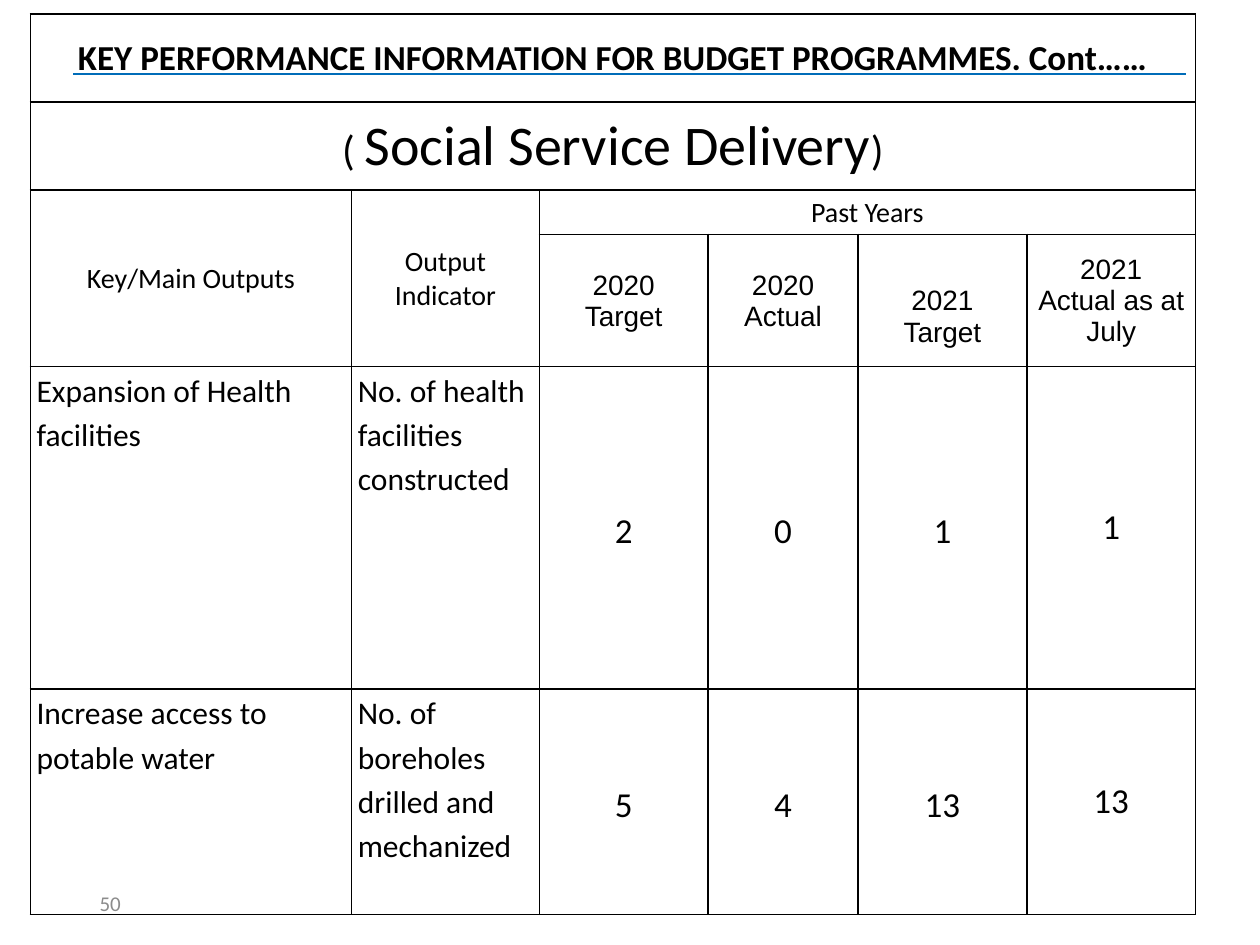
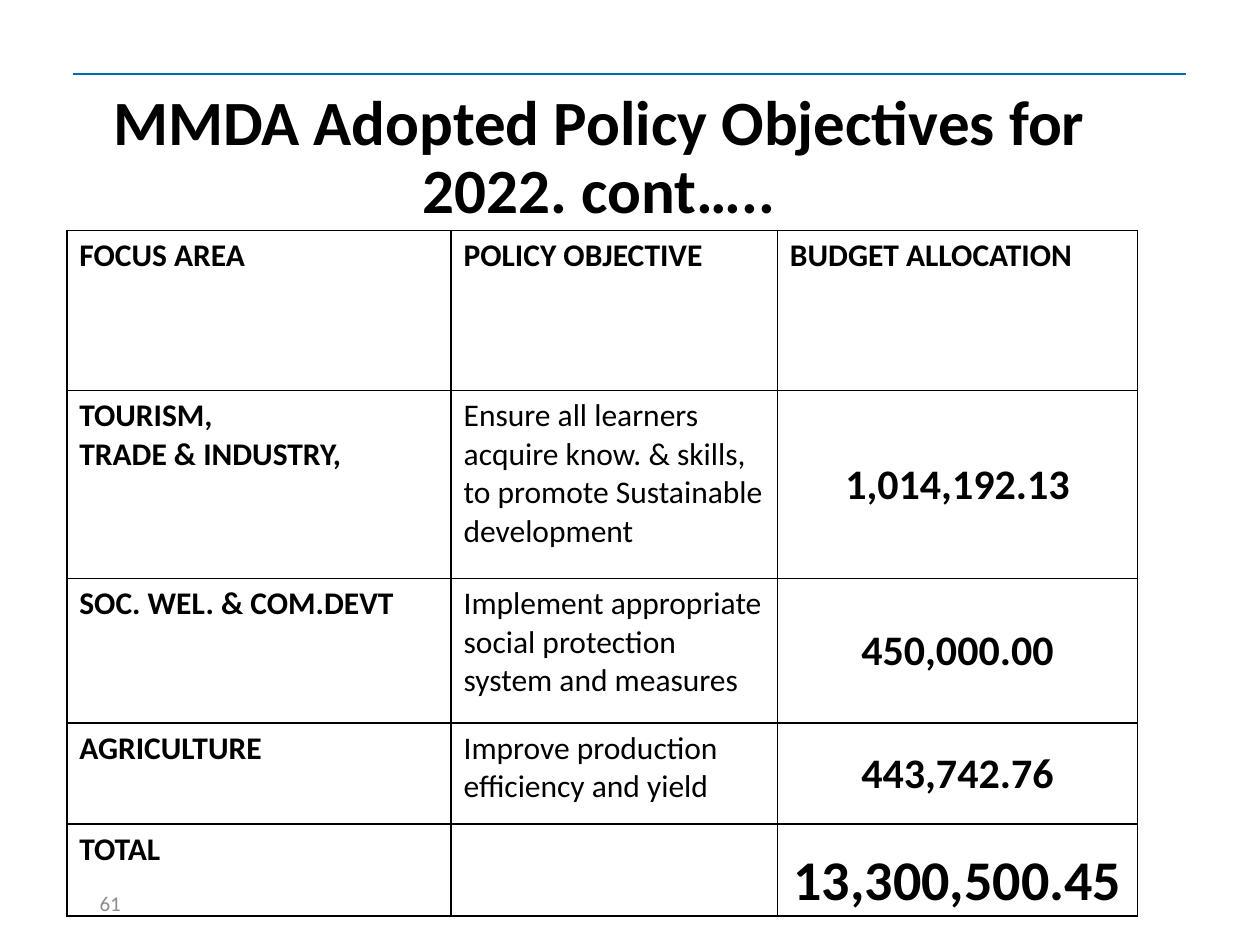
from dataclasses import dataclass, replace
from typing import NamedTuple

from lxml.etree import SubElement
from pptx import Presentation
from pptx.dml.color import RGBColor
from pptx.enum.shapes import MSO_CONNECTOR as Connector
from pptx.enum.text import MSO_ANCHOR as Anchor, PP_ALIGN as Align
from pptx.oxml.ns import qn
from pptx.util import Inches, Pt

BLACK = RGBColor(0x00, 0x00, 0x00)
RULE_BLUE = RGBColor(0x00, 0x6C, 0xB8)
NUMBER_GREY = RGBColor(0x8C, 0x8C, 0x8C)
BODY_FONT = "Calibri"
YEAR_FONT = "Arial"
BORDER_WIDTH = Pt(1)


class Run(NamedTuple):
    text: str
    size: float


@dataclass(frozen=True)
class CellStyle:
    size: float
    bold: bool = False
    font: str = BODY_FONT
    align: Align = Align.LEFT
    anchor: Anchor = Anchor.TOP
    line_spacing: float = 1.0
    margins: tuple[float, float, float, float] = (0.01, 0.01, 0.01, 0)


@dataclass(frozen=True)
class Entry:
    """A table cell: its place, its text, and how many rows and columns it spans."""
    row: int
    col: int
    text: str | tuple[Run, ...]
    style: CellStyle
    rows: int = 1
    cols: int = 1


@dataclass(frozen=True)
class TableSpec:
    left: float
    top: float
    col_widths: tuple[float, ...]
    row_heights: tuple[float, ...]
    entries: list[Entry]


BANNER = CellStyle(20, bold=True, align=Align.CENTER, anchor=Anchor.MIDDLE)
SECTOR = replace(BANNER, size=24, bold=False)
HEADING = replace(SECTOR, size=16)
YEAR = replace(HEADING, font=YEAR_FONT)
LOWERED_YEAR = replace(YEAR, margins=(0.01, 0.26, 0.01, 0))
OUTPUT = CellStyle(18, line_spacing=1.15, margins=(0.05, 0, 0.05, 0))
RESULT = replace(OUTPUT, size=20, align=Align.CENTER, anchor=Anchor.MIDDLE)
LATEST_RESULT = replace(RESULT, line_spacing=1.0)

OBJECTIVE = CellStyle(18, margins=(0.1, 0.05, 0.1, 0.05))
FOCUS_AREA = replace(OBJECTIVE, bold=True)
AMOUNT = replace(BANNER, size=24)
TOTAL_AMOUNT = replace(AMOUNT, size=32, anchor=Anchor.BOTTOM)


def write_text(frame, text: str | tuple[Run, ...], *, size: float,
               color: RGBColor = BLACK, bold: bool = False, font: str = BODY_FONT,
               align: Align = Align.LEFT, line_spacing: float = 1.0) -> None:
    """Write one paragraph per line of a string, or one paragraph of sized runs."""
    if isinstance(text, str):
        paragraphs = [(Run(line, size),) for line in text.split("\n")]
    else:
        paragraphs = [text]
    for index, runs in enumerate(paragraphs):
        paragraph = frame.add_paragraph() if index else frame.paragraphs[0]
        paragraph.alignment = align
        paragraph.line_spacing = line_spacing
        for part in runs:
            run = paragraph.add_run()
            run.text = part.text
            run.font.size = Pt(part.size)
            run.font.name = font
            run.font.bold = bold
            run.font.color.rgb = color


def add_text(slide, left: float, top: float, width: float, height: float,
             text: str, **text_format) -> None:
    frame = slide.shapes.add_textbox(
        Inches(left), Inches(top), Inches(width), Inches(height)).text_frame
    frame.word_wrap = True
    frame.margin_left = frame.margin_top = frame.margin_right = frame.margin_bottom = 0
    write_text(frame, text, **text_format)


def add_header_rule(slide) -> None:
    rule = slide.shapes.add_connector(
        Connector.STRAIGHT, Inches(0.58), Inches(0.59), Inches(9.41), Inches(0.59))
    rule.line.color.rgb = RULE_BLUE
    rule.line.width = Pt(1)
    SubElement(rule._element.spPr, qn("a:effectLst"))


def add_base_slide(deck, number: int):
    """Add a blank slide with the shared rule and page number."""
    slide = deck.slides.add_slide(deck.slide_layouts[6])
    add_header_rule(slide)
    add_text(slide, 0.79, 7.07, 0.45, 0.2, str(number), size=12, color=NUMBER_GREY)
    return slide


def outline_cell(cell) -> None:
    cell.fill.background()
    properties = cell._tc.get_or_add_tcPr()
    for index, side in enumerate(("lnL", "lnR", "lnT", "lnB")):
        border = SubElement(properties, qn(f"a:{side}"), w=str(BORDER_WIDTH))
        fill = SubElement(border, qn("a:solidFill"))
        SubElement(fill, qn("a:srgbClr"), val=str(BLACK))
        properties.remove(border)
        properties.insert(index, border)


def fill_cell(cell, entry: Entry) -> None:
    style = entry.style
    (cell.margin_left, cell.margin_top,
     cell.margin_right, cell.margin_bottom) = map(Inches, style.margins)
    cell.vertical_anchor = style.anchor
    write_text(cell.text_frame, entry.text, size=style.size, bold=style.bold,
               font=style.font, align=style.align, line_spacing=style.line_spacing)


def add_grid(slide, spec: TableSpec) -> None:
    table = slide.shapes.add_table(
        len(spec.row_heights), len(spec.col_widths),
        Inches(spec.left), Inches(spec.top),
        Inches(sum(spec.col_widths)), Inches(sum(spec.row_heights))).table
    table.first_row = table.horz_banding = False
    for column, width in zip(table.columns, spec.col_widths):
        column.width = Inches(width)
    for row, height in zip(table.rows, spec.row_heights):
        row.height = Inches(height)
    for cell in table.iter_cells():
        outline_cell(cell)
    for entry in spec.entries:
        cell = table.cell(entry.row, entry.col)
        if entry.rows > 1 or entry.cols > 1:
            cell.merge(table.cell(entry.row + entry.rows - 1,
                                  entry.col + entry.cols - 1))
        fill_cell(cell, entry)


def row_entries(row: int, texts: tuple[str, ...], styles: tuple[CellStyle, ...],
                first_col: int = 0) -> list[Entry]:
    return [Entry(row, col, text, style)
            for col, (text, style) in enumerate(zip(texts, styles), first_col)]


def add_performance_slide(deck) -> None:
    sector = (Run("( ", 24), Run("Social Service Delivery", 32), Run(")", 24))
    entries = [
        Entry(0, 0, "KEY PERFORMANCE INFORMATION FOR BUDGET PROGRAMMES. Cont……",
              BANNER, cols=6),
        Entry(1, 0, sector, SECTOR, cols=6),
        Entry(2, 0, "Key/Main Outputs", HEADING, rows=2),
        Entry(2, 1, "Output Indicator", HEADING, rows=2),
        Entry(2, 2, "Past Years", HEADING, cols=4),
    ]
    entries += row_entries(
        3, ("2020\nTarget", "2020\nActual", "2021\nTarget", "2021\nActual as at July"),
        (YEAR, YEAR, LOWERED_YEAR, YEAR), first_col=2)
    outputs = (
        ("Expansion of Health facilities", "No. of health facilities constructed",
         "2", "0", "1", "1"),
        ("Increase access to potable water", "No. of boreholes drilled and mechanized",
         "5", "4", "13", "13"),
    )
    output_styles = (OUTPUT, OUTPUT, RESULT, RESULT, RESULT, LATEST_RESULT)
    for row, texts in enumerate(outputs, 4):
        entries += row_entries(row, texts, output_styles)
    add_grid(add_base_slide(deck, 50), TableSpec(
        0.24, 0.11, (2.55, 1.49, 1.34, 1.19, 1.34, 1.34),
        (0.7, 0.7, 0.35, 1.05, 2.56, 1.79), entries))


def add_objectives_slide(deck) -> None:
    slide = add_base_slide(deck, 61)
    add_text(slide, 0.59, 0.72, 8.33, 1.03,
             "MMDA Adopted Policy Objectives for 2022. cont…..",
             size=36, bold=True, align=Align.CENTER, line_spacing=0.9)
    entries = row_entries(0, ("FOCUS AREA", "POLICY OBJECTIVE", "BUDGET ALLOCATION"),
                          (FOCUS_AREA,) * 3)
    allocations = (
        ("TOURISM,\nTRADE & INDUSTRY,",
         "Ensure all learners acquire know. & skills, to promote Sustainable development",
         "1,014,192.13"),
        ("SOC. WEL. & COM.DEVT",
         "Implement appropriate social protection system and measures", "450,000.00"),
        ("AGRICULTURE", "Improve production efficiency and yield", "443,742.76"),
    )
    for row, texts in enumerate(allocations, 1):
        entries += row_entries(row, texts, (FOCUS_AREA, OBJECTIVE, AMOUNT))
    entries += [Entry(4, 0, "TOTAL", FOCUS_AREA),
                Entry(4, 2, "13,300,500.45", TOTAL_AMOUNT)]
    add_grid(slide, TableSpec(0.53, 1.83, (3.05, 2.59, 2.86),
                              (1.27, 1.49, 1.15, 0.8, 0.73), entries))


def main() -> None:
    deck = Presentation()
    deck.slide_width, deck.slide_height = Inches(10), Inches(7.5)
    add_performance_slide(deck)
    add_objectives_slide(deck)
    deck.save("out.pptx")


if __name__ == "__main__":
    main()
